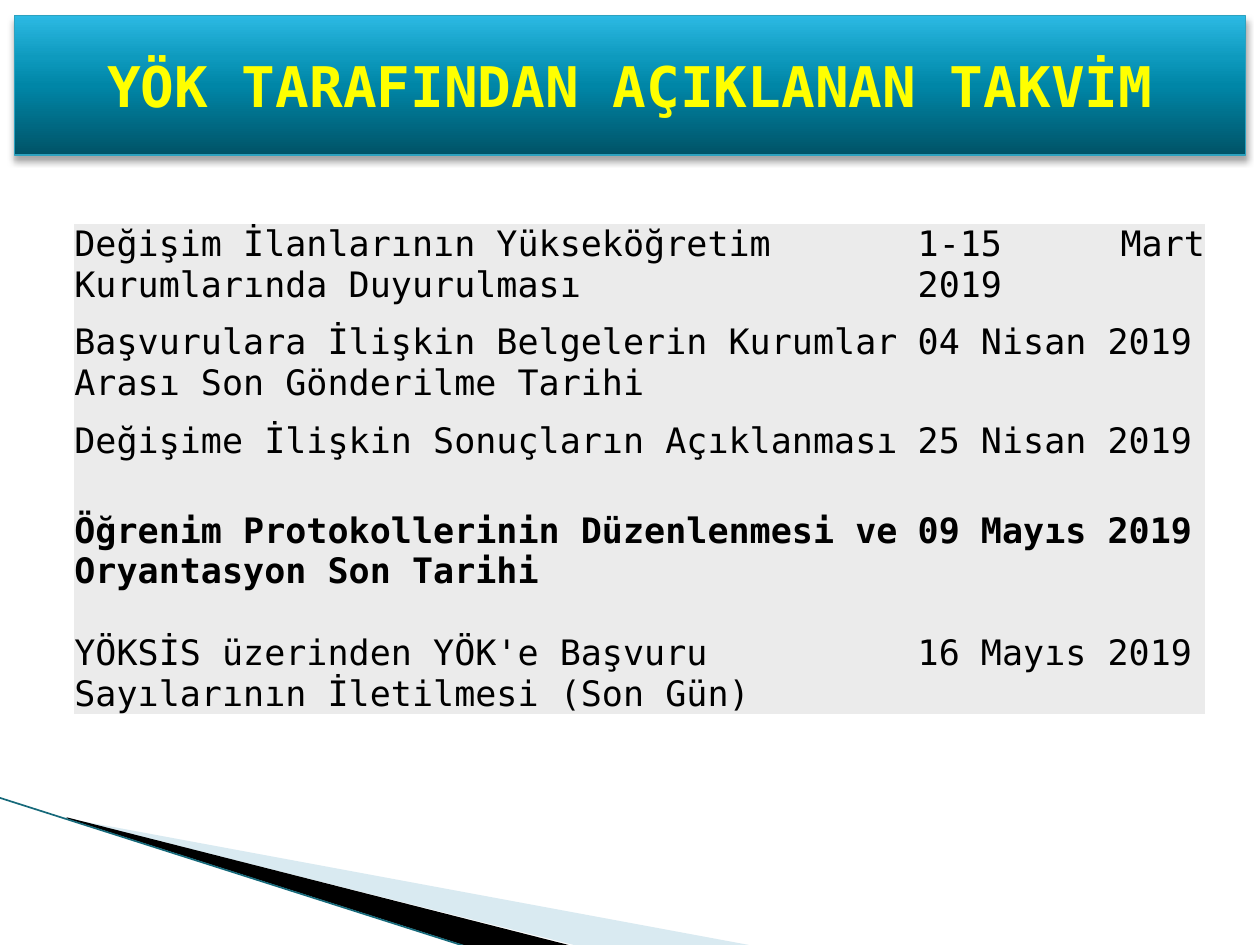
from lxml.etree import SubElement as Sub
from pptx import Presentation
from pptx.dml.color import RGBColor as RGB
from pptx.enum.shapes import MSO_CONNECTOR as CONN, MSO_SHAPE as SHAPE
from pptx.enum.text import MSO_ANCHOR as ANCHOR, PP_ALIGN as ALIGN
from pptx.oxml.ns import qn
from pptx.util import Pt

COLORS = {
    "band": "A0CBDC", "black": "000000", "edge": "16697A", "border": "2DA2BF",
    "title": "FFFF00", "cell": "EBEBEB", "shadow": "000000",
}
BANNER_STOPS = [(0, "005367"), (50, "0086A7"), (70, "0E9ABE"), (100, "2CB9E3")]
NO_STYLE = "{2D5ABB26-0587-4C30-8999-92F81FD0307C}"
LINE = 23.3
CALENDAR = [
    ("Değişim İlanlarının Yükseköğretim Kurumlarında Duyurulması", "1-15 Mart 2019", 56.2, 0, False),
    ("Başvurulara İlişkin Belgelerin Kurumlar Arası Son Gönderilme Tarihi", "04 Nisan 2019", 56.2, 0, False),
    ("Değişime İlişkin Sonuçların Açıklanması", "25 Nisan 2019", 28.1, 0, False),
    ("Öğrenim Protokollerinin Düzenlenmesi ve Oryantasyon Son Tarihi", "09 Mayıs 2019", 3 * LINE, LINE, True),
    ("YÖKSİS üzerinden YÖK'e Başvuru Sayılarının İletilmesi (Son Gün)", "16 Mayıs 2019", 3 * LINE, LINE, False),
]


class Deck:
    """Slide style and drawing methods."""

    def __init__(self, prs, font):
        self.font = font
        self.s = prs.slides.add_slide(prs.slide_layouts[6])

    def color(self, name):
        return RGB.from_string(COLORS[name])

    def set_text(self, tf, text, size, color, bold, align):
        tf.word_wrap = True
        p = tf.paragraphs[0]
        p.text, p.alignment = text, align
        p.font.name, p.font.size, p.font.bold = self.font, Pt(size), bold
        p.font.color.rgb = self.color(color)

    def wedge(self, points, color, alpha=100):
        fb = self.s.shapes.build_freeform(*points[0], scale=Pt(1))
        fb.add_line_segments(points[1:], close=True)
        sp = fb.convert_to_shape()
        sp.shadow.inherit = False
        sp.fill.solid()
        sp.fill.fore_color.rgb = self.color(color)
        sp.line.fill.background()
        if alpha < 100:
            clr = sp._element.spPr.find(qn("a:solidFill"))[0]
            Sub(clr, qn("a:alpha"), val=str(alpha * 1000))

    def line(self, x1, y1, x2, y2, color, width):
        c = self.s.shapes.add_connector(CONN.STRAIGHT, Pt(x1), Pt(y1), Pt(x2), Pt(y2))
        c.line.color.rgb, c.line.width = self.color(color), Pt(width)
        Sub(c._element.spPr, qn("a:effectLst"))

    def banner(self, x, y, w, h, text, stops):
        sp = self.s.shapes.add_shape(SHAPE.RECTANGLE, Pt(x), Pt(y), Pt(w), Pt(h))
        sp.fill.gradient()
        sp.fill.gradient_angle = 90
        gs_lst = sp._element.spPr.find(qn("a:gradFill")).find(qn("a:gsLst"))
        for gs in list(gs_lst):
            gs_lst.remove(gs)
        for pos, color in stops:
            gs = Sub(gs_lst, qn("a:gs"), pos=str(pos * 1000))
            Sub(gs, qn("a:srgbClr"), val=color)
        sp.line.color.rgb, sp.line.width = self.color("border"), Pt(0.75)
        sp.shadow.inherit = False
        effects = sp._element.spPr.find(qn("a:effectLst"))
        shadow = Sub(effects, qn("a:outerShdw"), blurRad=str(Pt(4)), dist=str(Pt(3)),
                     dir="5400000", rotWithShape="0")
        clr = Sub(shadow, qn("a:srgbClr"), val=COLORS["shadow"])
        Sub(clr, qn("a:alpha"), val="35000")
        sp.text_frame.vertical_anchor = ANCHOR.MIDDLE
        self.set_text(sp.text_frame, text, 32, "title", True, ALIGN.CENTER)

    def table(self, x, y, widths, rows):
        height = sum(row[2] for row in rows)
        frame = self.s.shapes.add_table(len(rows), len(widths), Pt(x), Pt(y),
                                        Pt(sum(widths)), Pt(height))
        tbl = frame.table
        tbl.first_row = tbl.horz_banding = False
        tbl._tbl.tblPr.find(qn("a:tableStyleId")).text = NO_STYLE
        for col, width in zip(tbl.columns, widths):
            col.width = Pt(width)
        for row, (task, date, h, top, bold) in zip(tbl.rows, rows):
            row.height = Pt(h)
            for cell, text, align in zip(row.cells, (task, date), (ALIGN.LEFT, ALIGN.JUSTIFY)):
                cell.margin_left = cell.margin_right = cell.margin_bottom = 0
                cell.margin_top = Pt(top)
                cell.fill.solid()
                cell.fill.fore_color.rgb = self.color("cell")
                self.set_text(cell.text_frame, text, 20, "black", bold, align)


def main():
    prs = Presentation()
    prs.slide_width, prs.slide_height = Pt(720), Pt(540)
    deck = Deck(prs, "DejaVu Sans Mono")
    deck.wedge([(39.6, 468.5), (428.4, 540.5), (328.3, 540.5), (39.6, 468)], "band", 40)
    deck.wedge([(38.2, 467.3), (329, 540.7), (267.8, 541), (38.9, 468)], "black")
    deck.line(-0.5, 455.8, 267.3, 541.2, "edge", 0.95)
    deck.banner(8.4, 9, 703.5, 79.5, "YÖK TARAFINDAN AÇIKLANAN TAKVİM", BANNER_STOPS)
    deck.table(42.5, 128, [481.9, 164.2], CALENDAR)
    prs.save("out.pptx")


if __name__ == "__main__":
    main()
